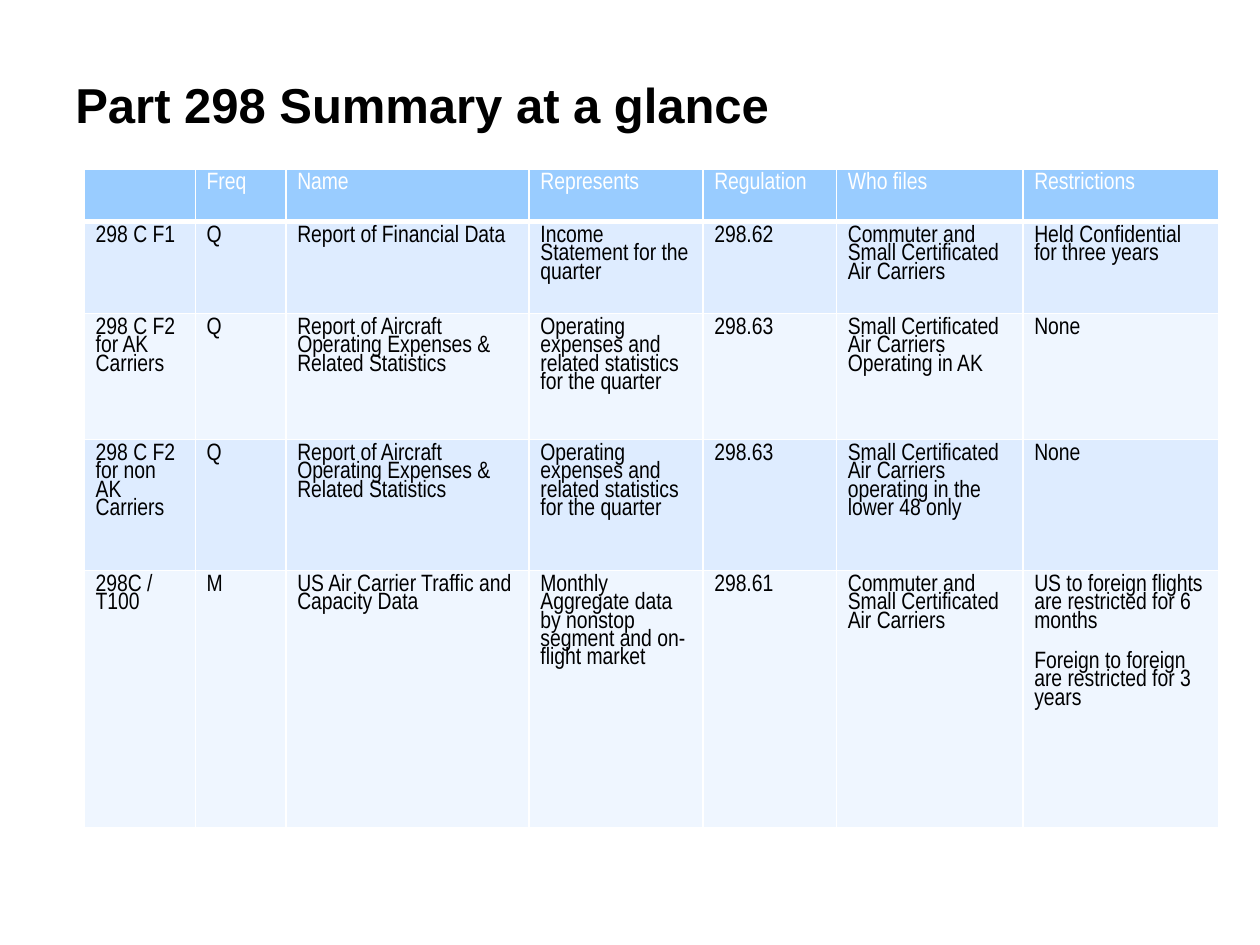
from lxml import etree
from pptx import Presentation
from pptx import util as u
from pptx.dml.color import RGBColor
from pptx.enum import text
from pptx.oxml import ns

BLACK = RGBColor(0x00, 0x00, 0x00)
WHITE = RGBColor(0xFF, 0xFF, 0xFF)
HEADER_BLUE = RGBColor(0x99, 0xCC, 0xFF)
BAND_BLUES = RGBColor(0xDE, 0xEC, 0xFF), RGBColor(0xEF, 0xF6, 0xFF)

# One hundredth of an inch is the grid unit; the slide is 1000 by 750 units.
UNIT = u.Inches(0.01)
COLUMNS = [88, 72, 193, 138, 106, 148, 155]
ROWS = [42, 73, 100, 104, 204]

TITLE_FONT = {"name": "Arial", "size": u.Pt(28), "bold": True}
CELL_FONT = {"name": "Arial Narrow", "size": u.Pt(13.5), "bold": False}
CELL_LINE_SPACING = 0.82
PARAGRAPH_GAP = u.Pt(12.75)

AIRCRAFT_REPORT = "Report of Aircraft Operating Expenses & Related Statistics"
OPERATING_EXPENSES = "Operating expenses and related statistics for the quarter"
COMMUTER_CARRIERS = "Commuter and Small Certificated Air Carriers"
FILINGS = [
    ["", "Freq", "Name", "Represents", "Regulation", "Who files", "Restrictions"],
    ["298 C F1", "Q", "Report of Financial Data", "Income Statement for the quarter",
     "298.62", COMMUTER_CARRIERS, "Held Confidential for three years"],
    ["298 C F2 for AK Carriers", "Q", AIRCRAFT_REPORT, OPERATING_EXPENSES,
     "298.63", "Small Certificated Air Carriers Operating in AK", "None"],
    ["298 C F2 for non AK Carriers", "Q", AIRCRAFT_REPORT, OPERATING_EXPENSES,
     "298.63", "Small Certificated Air Carriers operating in the lower 48 only", "None"],
    ["298C / T100", "M", "US Air Carrier Traffic and Capacity Data",
     "Monthly Aggregate data by nonstop segment and on-flight market",
     "298.61", COMMUTER_CARRIERS,
     "US to foreign flights are restricted for 6 months\n"
     "Foreign to foreign are restricted for 3 years"],
]


def format_font(font, values, color):
    for attribute, value in values.items():
        setattr(font, attribute, value)
    font.color.rgb = color


def add_borders(cell, widths):
    """Draw white cell borders; widths maps each side (L, R, T, B) to points."""
    properties = cell._tc.get_or_add_tcPr()
    for position, (side, width) in enumerate(widths.items()):
        line = etree.Element(ns.qn(f"a:ln{side}"), w=str(u.Pt(width)))
        fill = etree.SubElement(line, ns.qn("a:solidFill"))
        etree.SubElement(fill, ns.qn("a:srgbClr"), val=str(WHITE))
        properties.insert(position, line)


presentation = Presentation()
presentation.slide_width = 1000 * UNIT
presentation.slide_height = 750 * UNIT
slide = presentation.slides.add_slide(presentation.slide_layouts[6])

title = slide.shapes.add_textbox(50 * UNIT, 50 * UNIT, 900 * UNIT, 65 * UNIT)
title.text_frame.word_wrap = True
title.text_frame.vertical_anchor = text.MSO_ANCHOR.MIDDLE
title.text_frame.text = "Part 298 Summary at a glance"
format_font(title.text_frame.paragraphs[0].runs[0].font, TITLE_FONT, BLACK)

table = slide.shapes.add_table(
    len(ROWS), len(COLUMNS), 67 * UNIT, 134 * UNIT,
    sum(COLUMNS) * UNIT, sum(ROWS) * UNIT).table
for column, width in zip(table.columns, COLUMNS):
    column.width = width * UNIT
for row, height in zip(table.rows, ROWS):
    row.height = height * UNIT

for row_index, filing in enumerate(FILINGS):
    is_header = row_index == 0
    fill_color = HEADER_BLUE if is_header else BAND_BLUES[(row_index - 1) % 2]
    text_color = WHITE if is_header else BLACK
    for column_index, wording in enumerate(filing):
        cell = table.cell(row_index, column_index)
        cell.margin_left = cell.margin_right = 9 * UNIT
        cell.margin_top = cell.margin_bottom = 5 * UNIT
        cell.fill.solid()
        cell.fill.fore_color.rgb = fill_color
        add_borders(cell, {"L": 1, "R": 1, "T": 1, "B": 3 if is_header else 1})
        cell.text = wording
        for paragraph_index, paragraph in enumerate(cell.text_frame.paragraphs):
            paragraph.line_spacing = CELL_LINE_SPACING
            if paragraph_index:
                paragraph.space_before = PARAGRAPH_GAP
            format_font(paragraph.font, CELL_FONT, text_color)
            for run in paragraph.runs:
                format_font(run.font, CELL_FONT, text_color)

presentation.save("out.pptx")
